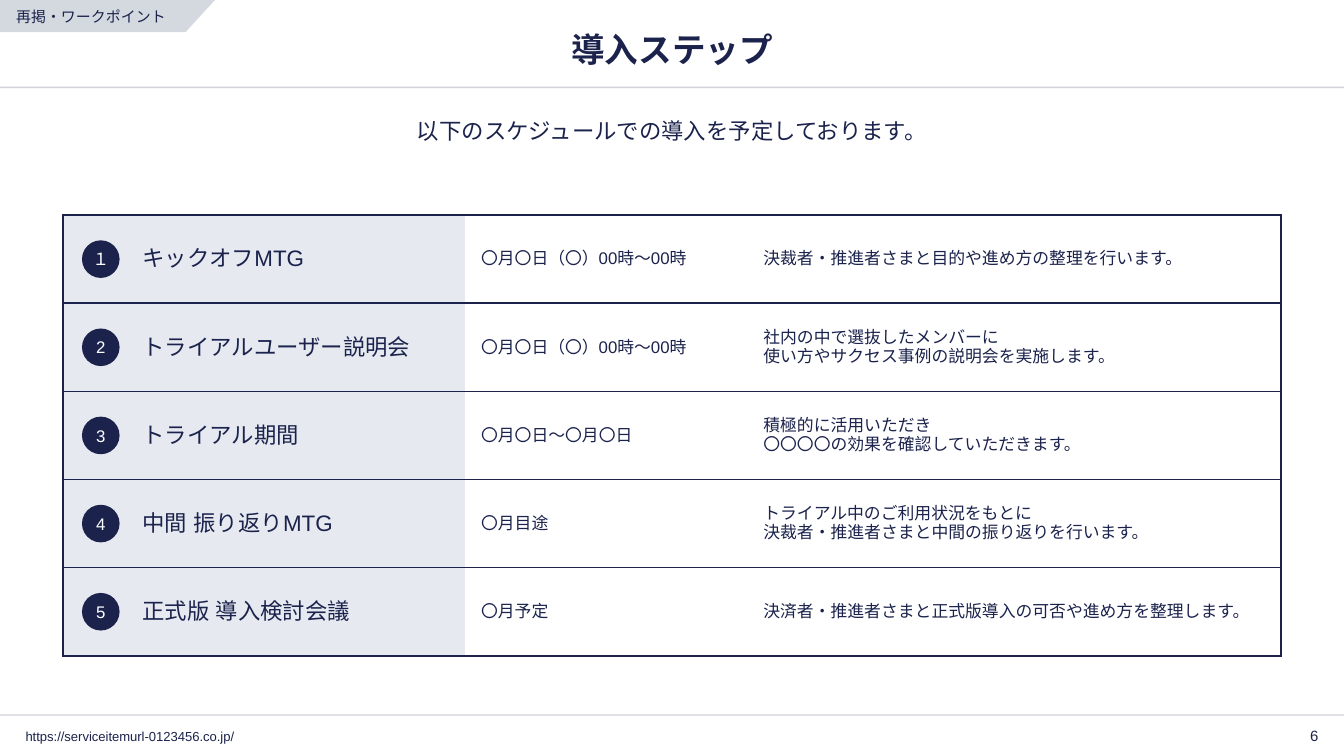
from lxml.etree import SubElement
from pptx import Presentation
from pptx.dml.color import RGBColor
from pptx.enum.shapes import MSO_CONNECTOR, MSO_SHAPE
from pptx.enum.text import MSO_ANCHOR, MSO_AUTO_SIZE, PP_ALIGN
from pptx.oxml.ns import qn
from pptx.util import Inches, Pt

FONT = "Arial"
HUES = {"navy": "1B224C", "pale": "E6EAF0", "tab": "D4D9DF", "white": "FFFFFF"}
COLS = [0.55, 2.44, 2.14, 3.93]
LEFT, TOP, DOT = 0.47, 1.6, 0.28
EDGES = (0.04, 0.04, 0.04, 0.04)
NO_STYLE = "{2D5ABB26-0587-4C30-8999-92F81FD0307C}"

# Badge, step, date, details
STEPS = [
    ("１", "キックオフMTG", "〇月〇日（〇）00時〜00時",
     "決裁者・推進者さまと目的や進め方の整理を行います。"),
    ("2", "トライアルユーザー説明会", "〇月〇日（〇）00時〜00時",
     "社内の中で選抜したメンバーに\n使い方やサクセス事例の説明会を実施します。"),
    ("3", "トライアル期間", "〇月〇日〜〇月〇日",
     "積極的に活用いただき\n〇〇〇〇の効果を確認していただきます。"),
    ("4", "中間 振り返りMTG", "〇月目途",
     "トライアル中のご利用状況をもとに\n決裁者・推進者さまと中間の振り返りを行います。"),
    ("5", "正式版 導入検討会議", "〇月予定",
     "決済者・推進者さまと正式版導入の可否や進め方を整理します。"),
]
ROW = 3.28 / len(STEPS)


def color(name):
    return RGBColor.from_string(HUES[name])


def write(frame, text, size=9, hue="navy", bold=False, align=PP_ALIGN.LEFT):
    frame.text = text
    for para in frame.paragraphs:
        para.alignment = align
        para.space_before = Pt(0)
        for run in para.runs:
            font = run.font
            font.name, font.size, font.bold = FONT, Pt(size), bold
            font.color.rgb = color(hue)
            SubElement(run._r.rPr, qn("a:ea"), typeface=FONT)


def inset(item, sides):
    """Set left, top, right and bottom margins of a frame or cell."""
    (item.margin_left, item.margin_top,
     item.margin_right, item.margin_bottom) = map(Inches, sides)


def fit(frame, sides=EDGES, anchor=MSO_ANCHOR.MIDDLE):
    frame.word_wrap = True
    frame.auto_size = MSO_AUTO_SIZE.NONE
    frame.vertical_anchor = anchor
    inset(frame, sides)


def place(shape, box):
    shape.left, shape.top, shape.width, shape.height = map(Inches, box)


def add_label(slide, box, text, **style):
    frame = slide.shapes.add_textbox(*map(Inches, box)).text_frame
    fit(frame)
    write(frame, text, **style)


def add_rule(slide, y):
    line = slide.shapes.add_connector(
        MSO_CONNECTOR.STRAIGHT, 0, Inches(y), Inches(10), Inches(y))
    line.line.color.rgb = color("navy")
    line.line.width = Pt(0.75)
    tint = line.line._ln.find(".//" + qn("a:srgbClr"))
    SubElement(tint, qn("a:alpha"), val="20000")
    SubElement(line._element.spPr, qn("a:effectLst"))


def paint(shape, hue):
    shape.shadow.inherit = False
    shape.fill.solid()
    shape.fill.fore_color.rgb = color(hue)
    shape.line.fill.background()


def add_tab(slide):
    pen = slide.shapes.build_freeform(0, Inches(0.24))
    ends = [(0, 0), (1.6, 0), (1.38, 0.24)]
    pen.add_line_segments([(Inches(x), Inches(y)) for x, y in ends])
    tab = pen.convert_to_shape()
    paint(tab, "tab")
    fit(tab.text_frame, (0.12, 0.08, 0.08, 0.08))
    write(tab.text_frame, "再掲・ワークポイント", size=8)


def add_dot(slide, row, text):
    y = TOP + row * ROW + (ROW - DOT) / 2
    dot = slide.shapes.add_shape(
        MSO_SHAPE.OVAL, *map(Inches, (0.61, y, DOT, DOT)))
    paint(dot, "navy")
    fit(dot.text_frame, (0, 0, 0, 0))
    write(dot.text_frame, text, hue="white", align=PP_ALIGN.CENTER)


def edge(cell, sides):
    props = cell._tc.get_or_add_tcPr()
    for side in "LRTB":
        line = SubElement(props, qn("a:ln" + side), w=str(Pt(1)))
        if side in sides:
            fill = SubElement(line, qn("a:solidFill"))
            SubElement(fill, qn("a:srgbClr"), val=HUES["navy"])
        else:
            SubElement(line, qn("a:noFill"))


def add_steps(slide):
    grid = slide.shapes.add_table(
        len(STEPS), len(COLS), Inches(LEFT), Inches(TOP),
        Inches(sum(COLS)), Inches(ROW * len(STEPS))).table
    grid.first_row = grid.horz_banding = False
    grid._tbl.tblPr.find(qn("a:tableStyleId")).text = NO_STYLE
    for col, width in zip(grid.columns, COLS):
        col.width = Inches(width)
    # Padding and type size of each column
    pads = [EDGES, (0.04, 0.08, 0.04, 0.08),
            (0.12, 0.08, 0.08, 0.08), (0.08, 0.08, 0.08, 0.08)]
    sizes = [9, 12, 9, 9]
    sides = ["LTB", "TB", "TB", "RTB"]
    for r, step in enumerate(STEPS):
        grid.rows[r].height = Inches(ROW)
        for c, text in enumerate(step):
            cell = grid.cell(r, c)
            edge(cell, sides[c])
            inset(cell, pads[c])
            cell.vertical_anchor = MSO_ANCHOR.MIDDLE
            if c < 2:
                cell.fill.solid()
                cell.fill.fore_color.rgb = color("pale")
            else:
                cell.fill.background()
            if c:
                write(cell.text_frame, text, size=sizes[c])
    # Badges over the first column
    for r, step in enumerate(STEPS):
        add_dot(slide, r, step[0])


def add_heads(slide):
    title, body = slide.shapes.title, slide.placeholders[1]
    place(title, (0.47, 0.17, 9.06, 0.39))
    fit(title.text_frame)
    write(title.text_frame, "導入ステップ", size=18, bold=True,
          align=PP_ALIGN.CENTER)
    place(body, (0.47, 0.83, 9.06, 0.51))
    fit(body.text_frame, anchor=MSO_ANCHOR.TOP)
    write(body.text_frame, "以下のスケジュールでの導入を予定しております。",
          size=12, align=PP_ALIGN.CENTER)
    # Plain lead line without a bullet
    props = body.text_frame.paragraphs[0]._p.get_or_add_pPr()
    props.set("marL", "0")
    props.set("indent", "0")
    SubElement(props, qn("a:buNone"))


def main():
    deck = Presentation()
    # Widescreen, 16 to 9
    deck.slide_width = Inches(10)
    deck.slide_height = Inches(10 * 9 / 16)
    slide = deck.slides.add_slide(deck.slide_layouts[1])
    # Frame of the page
    for y in (0.65, 5.32):
        add_rule(slide, y)
    add_label(slide, (9.46, 5.37, 0.39, 0.2), "6", size=8,
              align=PP_ALIGN.RIGHT)
    add_label(slide, (0.15, 5.38, 3.54, 0.2),
              "https://serviceitemurl-0123456.co.jp/", size=7)
    # Content
    add_heads(slide)
    add_steps(slide)
    add_tab(slide)
    deck.save("out.pptx")


if __name__ == "__main__":
    main()
